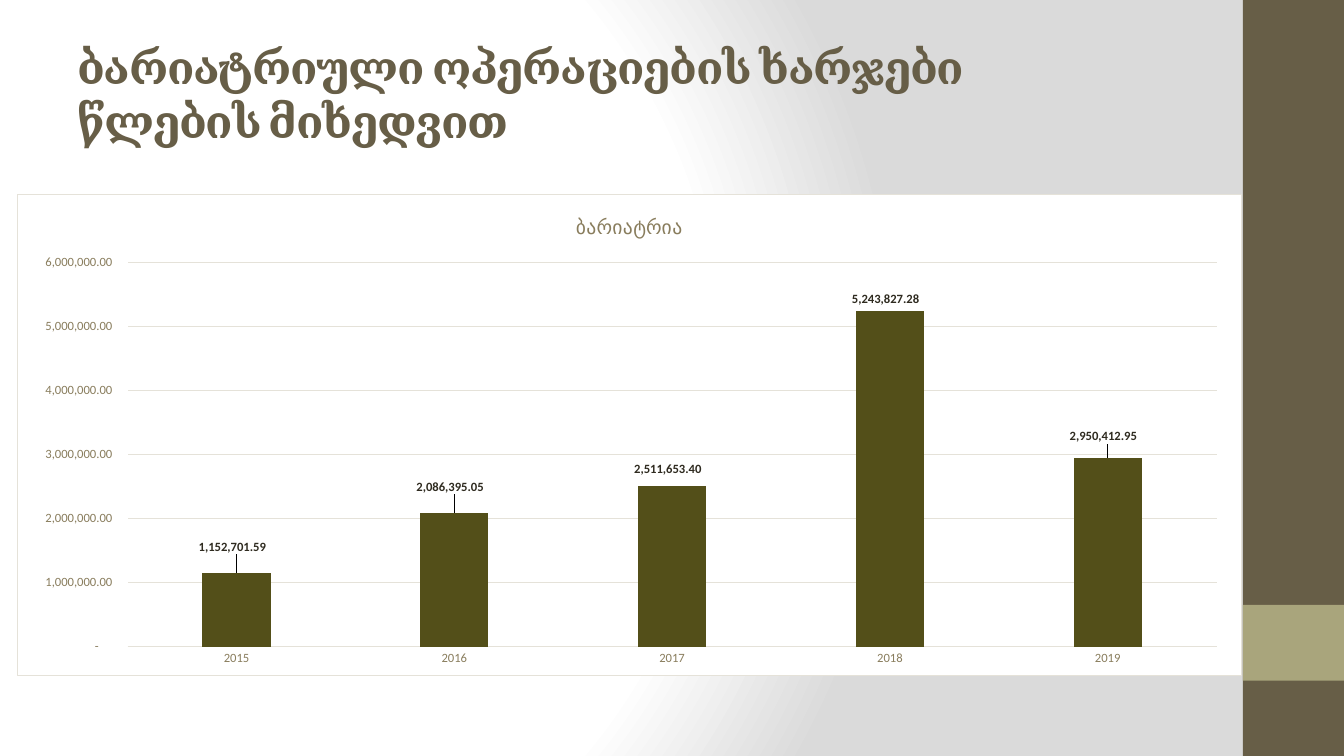
"""Build a slide with a column chart of bariatric surgery costs by year."""
from pptx import Presentation
from pptx.chart.data import CategoryChartData
from pptx.dml.color import RGBColor
from pptx.enum.chart import XL_CHART_TYPE, XL_LABEL_POSITION, XL_TICK_MARK
from pptx.enum.shapes import MSO_SHAPE
from pptx.enum.text import MSO_ANCHOR
from pptx.oxml import parse_xml
from pptx.oxml.ns import nsdecls
from pptx.util import Cm, Pt

COLUMNS = XL_CHART_TYPE.COLUMN_CLUSTERED
OUTSIDE_END = XL_LABEL_POSITION.OUTSIDE_END
NO_TICK = XL_TICK_MARK.NONE
RECTANGLE = MSO_SHAPE.RECTANGLE
MIDDLE = MSO_ANCHOR.MIDDLE

HEADING = ["ბარიატრიული ოპერაციების ხარჯები", "წლების მიხედვით"]
SERIES_NAME = "ბარიატრია"
COSTS = {
    "2015": 1152701.59,
    "2016": 2086395.05,
    "2017": 2511653.40,
    "2018": 5243827.28,
    "2019": 2950412.95,
}
LABEL_SHIFTS = {0: (0, -0.03), 1: (0, -0.03), 2: (0, -0.01), 4: (0, -0.02)}
NUMBER_FORMAT = r'_-* #,##0.00\ _₾_-;\-* #,##0.00\ _₾_-;_-* "-"??\ _₾_-;_-@_-'
COLORS = {
    "band": "675E47",
    "accent": "A9A57C",
    "column": "534F19",
    "label": "2F2B20",
    "axis": "897D5D",
    "grid": "E5E2D9",
    "white": "FFFFFF",
    "gray": "DADADA",
}
SLIDE_WIDTH, SLIDE_HEIGHT = 33.87, 19.05
BAND_LEFT, BAND_WIDTH = 31.32, 2.55
BANDS = [("band", 0, SLIDE_HEIGHT), ("accent", 15.24, 1.91)]
HEADING_BOX = (1.7, 0.76, 28.22, 3.18)
CHART_BOX = (0.43, 4.9, 30.86, 12.14)
PLOT_BOX = {"x": 0.09, "y": 0.14, "w": 0.89, "h": 0.8}


def color(name):
    return RGBColor.from_string(COLORS[name])


def style(font, name, size, face="Calibri", bold=False):
    font.name, font.size, font.bold = face, Pt(size), bold
    font.color.rgb = color(name)


def style_line(line):
    line.color.rgb = color("grid")
    line.width = Pt(0.75)


def manual_layout(values, modes=""):
    sizes = "".join(f'<c:{key} val="{value}"/>' for key, value in values.items())
    return parse_xml(
        f'<c:layout {nsdecls("c")}><c:manualLayout>{modes}{sizes}'
        "</c:manualLayout></c:layout>"
    )


def add_background(page):
    stops = "".join(
        f'<a:gs pos="{position * 1000}"><a:srgbClr val="{COLORS[name]}"/></a:gs>'
        for position, name in [(0, "white"), (75, "white"), (100, "gray")]
    )
    page.element.cSld.insert(0, parse_xml(
        f'<p:bg {nsdecls("p", "a")}><p:bgPr><a:gradFill rotWithShape="1">'
        f'<a:gsLst>{stops}</a:gsLst><a:path path="circle">'
        '<a:fillToRect l="20000" t="50000" r="100000" b="50000"/></a:path>'
        "</a:gradFill><a:effectLst/></p:bgPr></p:bg>"
    ))


def add_bands(page):
    for name, top, height in BANDS:
        band = page.shapes.add_shape(
            RECTANGLE, Cm(BAND_LEFT), Cm(top), Cm(BAND_WIDTH), Cm(height))
        band.shadow.inherit = False
        band.fill.solid()
        band.fill.fore_color.rgb = color(name)
        band.line.fill.background()


def add_heading(page):
    box = page.shapes.add_textbox(*map(Cm, HEADING_BOX))
    box.text_frame.word_wrap = True
    box.text_frame.vertical_anchor = MIDDLE
    para = box.text_frame.paragraphs[0]
    for index, text in enumerate(HEADING):
        if index:
            para.add_line_break()
        span = para.add_run()
        span.text = text
        style(span.font, "band", 32, "Cambria", True)
        span.font._element.set("spc", "-100")


def style_axes(chart):
    for axis in (chart.category_axis, chart.value_axis):
        axis.major_tick_mark = axis.minor_tick_mark = NO_TICK
        style(axis.tick_labels.font, "axis", 9)
    style_line(chart.category_axis.format.line)
    costs = chart.value_axis
    costs.minimum_scale, costs.maximum_scale, costs.major_unit = 0, 6000000, 1000000
    costs.format.line.fill.background()
    costs.has_major_gridlines = True
    style_line(costs.major_gridlines.format.line)
    costs.tick_labels.number_format = NUMBER_FORMAT
    costs.tick_labels.number_format_is_linked = False


def style_columns(chart):
    plot = chart.plots[0]
    plot.gap_width = 219
    plot.vary_by_categories = False
    series = plot.series[0]
    series.format.fill.solid()
    series.format.fill.fore_color.rgb = color("column")
    labels = series.data_labels
    labels.show_value = True
    labels.position = OUTSIDE_END
    labels.number_format = NUMBER_FORMAT
    labels.number_format_is_linked = False
    style(labels.font, "label", 9, bold=True)
    for index, (across, down) in LABEL_SHIFTS.items():
        label = series.points[index].data_label
        style(label.font, "label", 9, bold=True)
        label.position = OUTSIDE_END
        entry = labels._element.xpath(f"c:dLbl[c:idx/@val={index}]")[0]
        entry.insert(1, manual_layout({"x": across, "y": down}))


def add_cost_chart(page):
    data = CategoryChartData(number_format=NUMBER_FORMAT)
    data.categories = list(COSTS)
    data.add_series(SERIES_NAME, list(COSTS.values()))
    chart = page.shapes.add_chart(COLUMNS, *map(Cm, CHART_BOX), data).chart
    style(chart.font, "label", 10)
    chart.has_legend = False
    chart.has_title = True
    span = chart.chart_title.text_frame.paragraphs[0].add_run()
    span.text = SERIES_NAME
    style(span.font, "axis", 14)
    chart.chart_title.include_in_layout = False
    style_axes(chart)
    style_columns(chart)

    space = chart._chartSpace
    plot_area = space.xpath("c:chart/c:plotArea")[0]
    for layout in plot_area.xpath("c:layout"):
        plot_area.remove(layout)
    modes = ('<c:layoutTarget val="inner"/><c:xMode val="edge"/>'
             '<c:yMode val="edge"/>')
    plot_area.insert(0, manual_layout(PLOT_BOX, modes))
    space.xpath("c:chart")[0].addnext(parse_xml(
        f'<c:spPr {nsdecls("c", "a")}><a:solidFill>'
        f'<a:srgbClr val="{COLORS["white"]}"/></a:solidFill><a:ln w="9525">'
        f'<a:solidFill><a:srgbClr val="{COLORS["grid"]}"/></a:solidFill></a:ln>'
        "</c:spPr>"
    ))


def main():
    deck = Presentation()
    deck.slide_width, deck.slide_height = Cm(SLIDE_WIDTH), Cm(SLIDE_HEIGHT)
    page = deck.slides.add_slide(deck.slide_layouts[6])
    add_background(page)
    add_bands(page)
    add_heading(page)
    add_cost_chart(page)
    deck.save("out.pptx")


if __name__ == "__main__":
    main()
